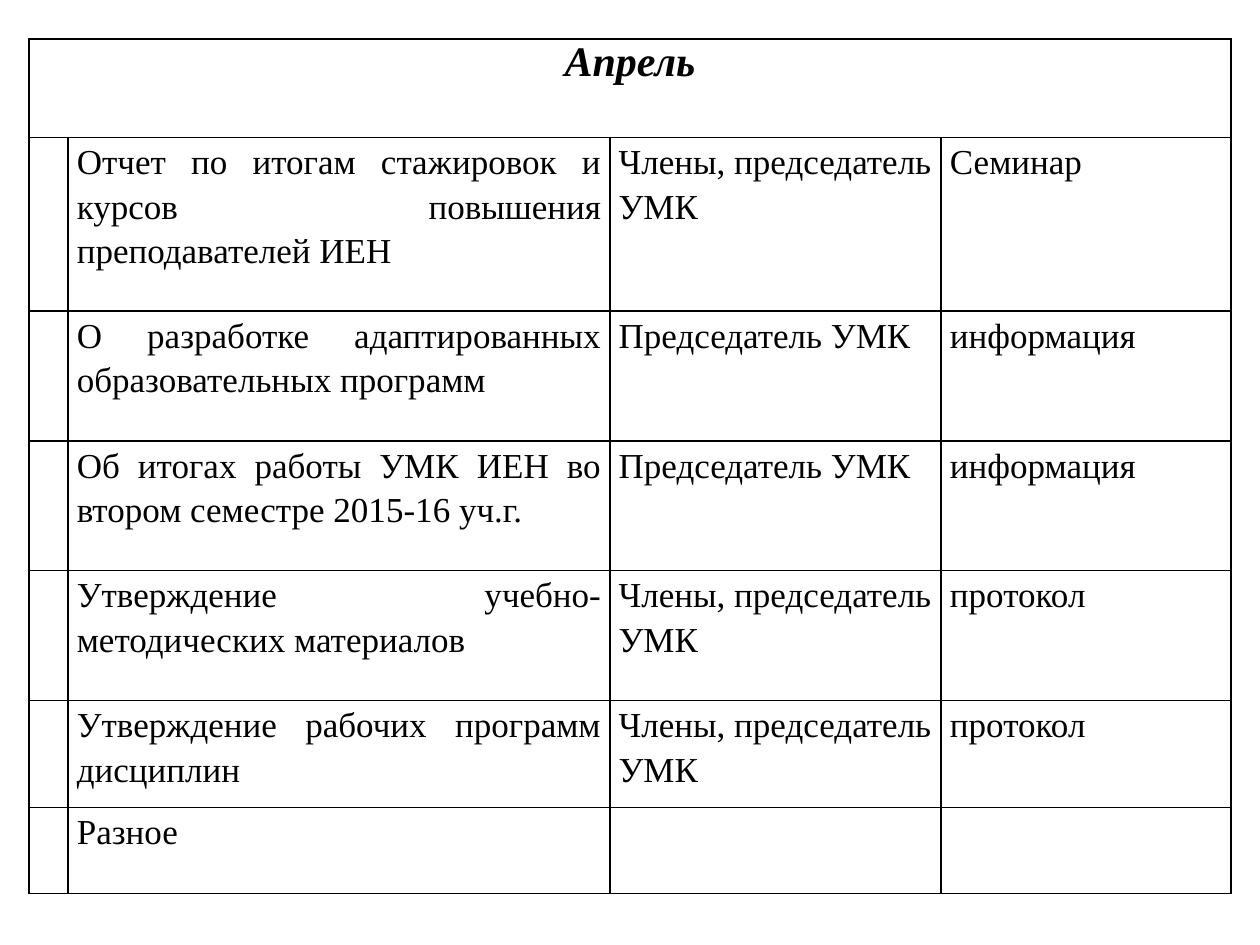
from dataclasses import dataclass

from lxml.etree import SubElement
from pptx import Presentation
from pptx.dml.color import RGBColor
from pptx.enum.text import PP_ALIGN
from pptx.oxml.ns import qn
from pptx.util import Inches, Pt


@dataclass(frozen=True)
class Theme:
    font: str = "Times New Roman"
    ink: str = "000000"
    title: int = 24
    body: int = 20
    border: int = 1
    spacing: float = 1.15
    title_pad: float = 0.05
    body_pad: float = 0.07


@dataclass(frozen=True)
class Item:
    topic: str
    people: str
    form: str
    height: float


THEME = Theme()
LEFT, TOP = 0.23, 0.31
COLUMNS = (0.31, 4.3, 2.63, 2.3)
TITLE_HEIGHT = 0.78
CHAIR = "Председатель УМК"
MEMBERS = "Члены, председатель УМК"
ITEMS = (
    Item("Отчет по итогам стажировок и курсов повышения преподавателей ИЕН",
         MEMBERS, "Семинар", 1.38),
    Item("О разработке адаптированных образовательных программ",
         CHAIR, "информация", 1.03),
    Item("Об итогах работы УМК ИЕН во втором семестре 2015-16 уч.г.",
         CHAIR, "информация", 1.03),
    Item("Утверждение учебно-методических материалов",
         MEMBERS, "протокол", 1.03),
    Item("Утверждение рабочих программ дисциплин",
         MEMBERS, "протокол", 0.85),
    Item("Разное", "", "", 0.68),
)


def write(cell, text: str, *, size: int = THEME.body, align=PP_ALIGN.JUSTIFY,
          spacing: float = THEME.spacing, pad: float = THEME.body_pad,
          bold: bool = False, italic: bool = False) -> None:
    cell.margin_left = cell.margin_right = Inches(pad)
    cell.margin_top = cell.margin_bottom = 0
    p = cell.text_frame.paragraphs[0]
    p.alignment = align
    p.line_spacing = spacing
    r = p.add_run()
    r.text = text
    r.font.name = THEME.font
    r.font.size = Pt(size)
    r.font.bold = bold
    r.font.italic = italic
    r.font.color.rgb = RGBColor.from_string(THEME.ink)


def outline(cell) -> None:
    tc_pr = cell._tc.get_or_add_tcPr()
    for side in ("lnL", "lnR", "lnT", "lnB"):
        ln = SubElement(tc_pr, qn(f"a:{side}"), w=str(Pt(THEME.border)))
        fill = SubElement(ln, qn("a:solidFill"))
        SubElement(fill, qn("a:srgbClr"), val=THEME.ink)
    cell.fill.background()


def add_plan(s, items: tuple[Item, ...]) -> None:
    heights = (TITLE_HEIGHT, *(item.height for item in items))
    frame = s.shapes.add_table(
        len(heights), len(COLUMNS), Inches(LEFT), Inches(TOP),
        Inches(sum(COLUMNS)), Inches(sum(heights)))
    table = frame.table
    table.first_row = table.horz_banding = False
    for column, width in zip(table.columns, COLUMNS):
        column.width = Inches(width)
    for row, height in zip(table.rows, heights):
        row.height = Inches(height)
    for cell in table.iter_cells():
        outline(cell)

    title = table.cell(0, 0)
    title.merge(table.cell(0, len(COLUMNS) - 1))
    write(title, "Апрель", size=THEME.title, align=PP_ALIGN.CENTER,
          spacing=1.0, pad=THEME.title_pad, bold=True, italic=True)
    aligns = (PP_ALIGN.JUSTIFY, PP_ALIGN.LEFT, PP_ALIGN.JUSTIFY)
    for i, item in enumerate(items, 1):
        texts = (item.topic, item.people, item.form)
        for j, (text, align) in enumerate(zip(texts, aligns), 1):
            if text:
                write(table.cell(i, j), text, align=align)


def main() -> None:
    prs = Presentation()
    prs.slide_width, prs.slide_height = Inches(10), Inches(7.5)
    s = prs.slides.add_slide(prs.slide_layouts[6])
    add_plan(s, ITEMS)
    prs.save("out.pptx")


if __name__ == "__main__":
    main()
